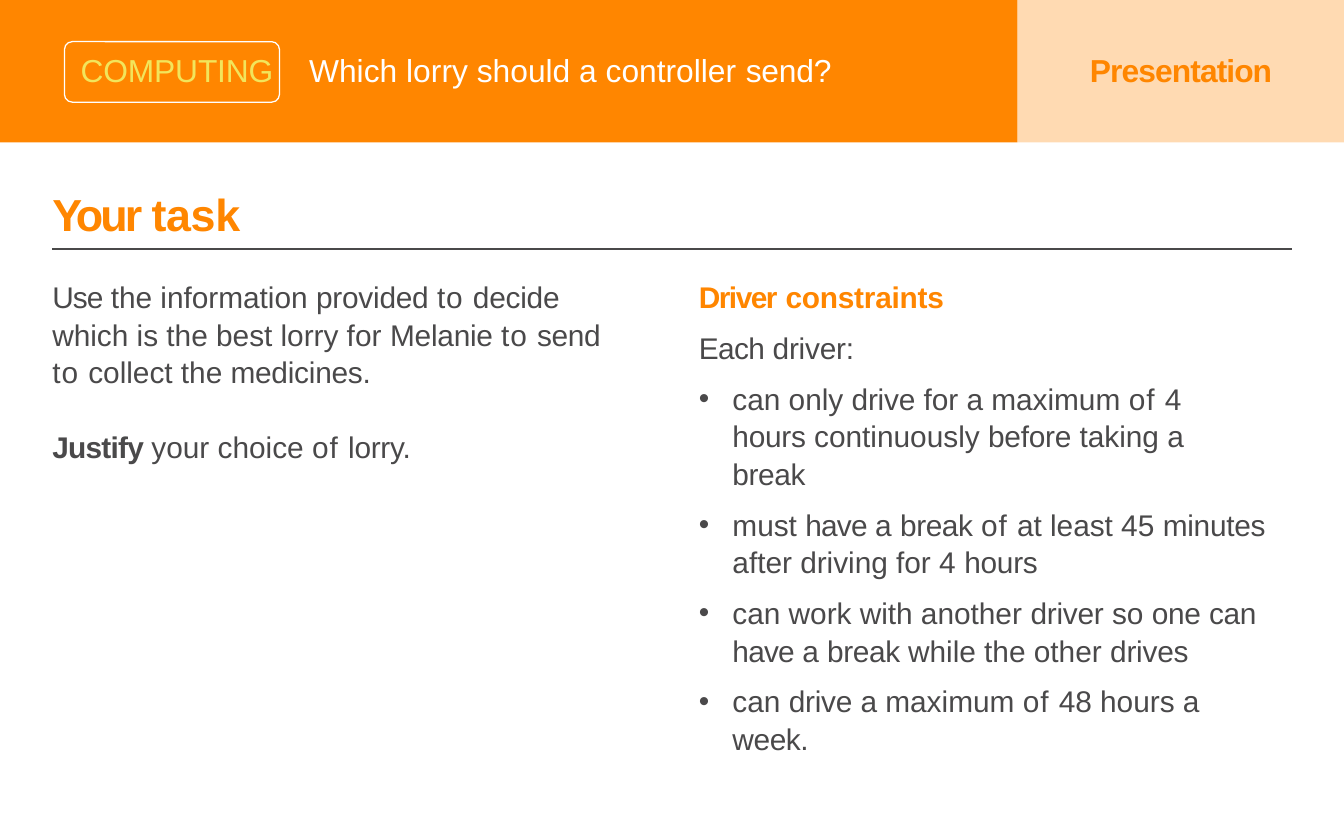
import pptx
import pptx.dml.color
import pptx.enum.shapes
import pptx.enum.text
import pptx.oxml.ns
import pptx.util
import lxml.etree

ORANGE, GREY, WHITE, YELLOW = "FF8600", "4A494A", "FFFFFF", "F2E55B"
COLUMNS, ROWS = 100, 62.4
INDENT = 2.5

TASK = [
    ("Use ", -0.5), ("the information ", 0), ("provided ", -0.1), ("to ", 0.5),
    ("decide ", -0.1), ("which is the best lorry for ", 0), ("Melanie ", -0.1),
    ("to ", 0.5), ("send ", -0.2), ("to ", 0.5), ("collect the", 0),
    (" medicines.", -0.1),
]
JUSTIFY = [("your choice ", 0), ("of ", 0.5), ("lorry.", -0.1)]
CONSTRAINTS = [
    [("can only ", 0), ("drive ", -0.1), ("for a maximum ", 0), ("of ", 0.5),
     ("4 ", 0), ("hours ", -0.1), ("continuously ", 0), ("before ", -0.1),
     ("taking a ", 0), ("break", -0.2)],
    [("must ", 0), ("have ", -0.4), ("a ", 0), ("break ", -0.2), ("of ", 0.5),
     ("at least 45 ", 0), ("minutes ", -0.1), ("after driving for 4 ", 0),
     ("hours", -0.1)],
    [("can work with another ", 0), ("driver ", -0.1), ("so ", 0),
     ("one ", -0.1), ("can ", -0.2), ("have ", -0.4), ("a ", 0),
     ("break ", -0.2), ("while the other ", 0), ("drives", -0.1)],
    [("can ", 0), ("drive ", -0.1), ("a maximum ", 0), ("of ", 0.5),
     ("48 hours a ", 0), ("week.", -0.2)],
]


def rgb(code):
    return pptx.dml.color.RGBColor.from_string(code)


def add_xml(parent, tag, **attributes):
    return lxml.etree.SubElement(parent, pptx.oxml.ns.qn(tag), attributes)


class Page:
    font = "Arial"

    def __init__(self, deck):
        self.unit = deck.slide_width / COLUMNS
        self.slide = deck.slides.add_slide(deck.slide_layouts[3])
        self.shapes = self.slide.shapes

    def grid(self, *lengths):
        return [pptx.util.Emu(round(length * self.unit)) for length in lengths]

    def panel(self, place, fill=None, opacity=100, line=None, corner=None):
        kinds = pptx.enum.shapes.MSO_SHAPE
        kind = kinds.RECTANGLE if corner is None else kinds.ROUNDED_RECTANGLE
        panel = self.shapes.add_shape(kind, *self.grid(*place))
        panel.shadow.inherit = False
        if corner is not None:
            panel.adjustments[0] = corner
        if fill:
            panel.fill.solid()
            panel.fill.fore_color.rgb = rgb(fill)
            if opacity < 100:
                color = panel._element.spPr.find(".//" + pptx.oxml.ns.qn("a:srgbClr"))
                add_xml(color, "a:alpha", val=str(opacity * 1000))
        else:
            panel.fill.background()
        if line:
            panel.line.color.rgb = rgb(line)
            panel.line.width = pptx.util.Pt(0.68)
        else:
            panel.line.fill.background()

    def rule(self, left, right, row):
        rule = self.shapes.add_connector(
            pptx.enum.shapes.MSO_CONNECTOR.STRAIGHT,
            *self.grid(left, row, right, row))
        rule.line.color.rgb = rgb(GREY)
        rule.line.width = pptx.util.Pt(1)
        add_xml(rule._element.spPr, "a:effectLst")

    def frame(self, place, holder=None):
        box = self.grid(*place)
        if holder is None:
            holder = self.shapes.add_textbox(*box)
        else:
            holder.left, holder.top, holder.width, holder.height = box
            self.shapes._spTree.append(holder._element)
        frame = holder.text_frame
        frame.word_wrap = True
        frame.auto_size = pptx.enum.text.MSO_AUTO_SIZE.NONE
        frame.vertical_anchor = pptx.enum.text.MSO_ANCHOR.TOP
        frame.margin_left = frame.margin_right = frame.margin_bottom = 0
        frame.margin_top = self.grid(0.1)[0]
        return frame

    def paragraph(self, frame, runs, size=16, color=GREY, bold=False,
                  before=0, lines=1.05, bullet=False, right=0):
        first = not frame.paragraphs[0].runs
        paragraph = frame.paragraphs[0] if first else frame.add_paragraph()
        layout = paragraph._p.get_or_add_pPr()
        margin, hang, edge = self.grid(2.6 if bullet else 0.1,
                                       -INDENT if bullet else 0, right)
        layout.set("marL", str(margin))
        layout.set("indent", str(hang))
        layout.set("marR", str(edge))
        if bullet:
            add_xml(layout, "a:buChar", char="•")
            tabs = add_xml(layout, "a:tabLst")
            add_xml(tabs, "a:tab", pos=str(margin), algn="l")
        else:
            add_xml(layout, "a:buNone")
        paragraph.alignment = pptx.enum.text.PP_ALIGN.LEFT
        paragraph.line_spacing = lines
        paragraph.space_before = pptx.util.Pt(before)
        paragraph.space_after = pptx.util.Pt(0)
        self.add_runs(paragraph, runs, size, color, bold)
        return paragraph

    def add_runs(self, paragraph, runs, size=16, color=GREY, bold=False):
        for words, tracking in runs:
            run = paragraph.add_run()
            run.text = words
            run.font.name = self.font
            run.font.size = pptx.util.Pt(size)
            run.font.bold = bold
            run.font.color.rgb = rgb(color)
            run._r.get_or_add_rPr().set("spc", str(round(tracking * 100)))

    def label(self, place, runs, size, color, bold=False, holder=None):
        self.paragraph(self.frame(place, holder), runs, size, color, bold, lines=1)


def main():
    deck = pptx.Presentation()
    deck.slide_width = pptx.util.Inches(10)
    deck.slide_height = round(deck.slide_width * ROWS / COLUMNS)
    page = Page(deck)
    title, task_holder, driver_holder = page.slide.placeholders

    page.panel((75.7, 0, 24.3, 10.6), ORANGE, opacity=30)
    page.panel((0, 0, 75.7, 10.6), ORANGE)
    page.label((5.9, 3.7, 14.9, 3.1), [("COMPUTING", -0.1)], 17, YELLOW)
    page.panel((4.8, 3.1, 16, 4.5), line=WHITE, corner=0.13)
    page.label((81, 3.7, 13.9, 3.1), [("Presentation", -0.5)], 17, ORANGE, True)
    page.label((22.9, 3.7, 39.5, 3.1),
               [("Which lorry should a controller ", 0), ("send?", -0.1)],
               17, WHITE, holder=title)

    page.label((3.8, 13.8, 14.4, 4.3), [("Your ", -1.6), ("task", -0.2)],
               24, ORANGE, True)
    page.rule(3.9, 96.1, 18.5)

    task = page.frame((3.8, 20.5, 41.6, 13.6), task_holder)
    page.paragraph(task, TASK)
    justify = page.paragraph(task, [("Justify ", -0.4)], bold=True, before=19.8)
    page.add_runs(justify, JUSTIFY)

    drivers = page.frame((51.9, 20.5, 43.3, 34.5), driver_holder)
    page.paragraph(drivers, [("Driver", -0.8), (" constraints", -0.1)],
                   color=ORANGE, bold=True)
    page.paragraph(drivers, [("Each ", -0.3), ("driver:", -0.1)], before=7.1)
    for order, constraint in enumerate(CONSTRAINTS):
        page.paragraph(drivers, constraint, before=7.1, bullet=True,
                       right=3 if order == 0 else 0)

    deck.save("out.pptx")


if __name__ == "__main__":
    main()
